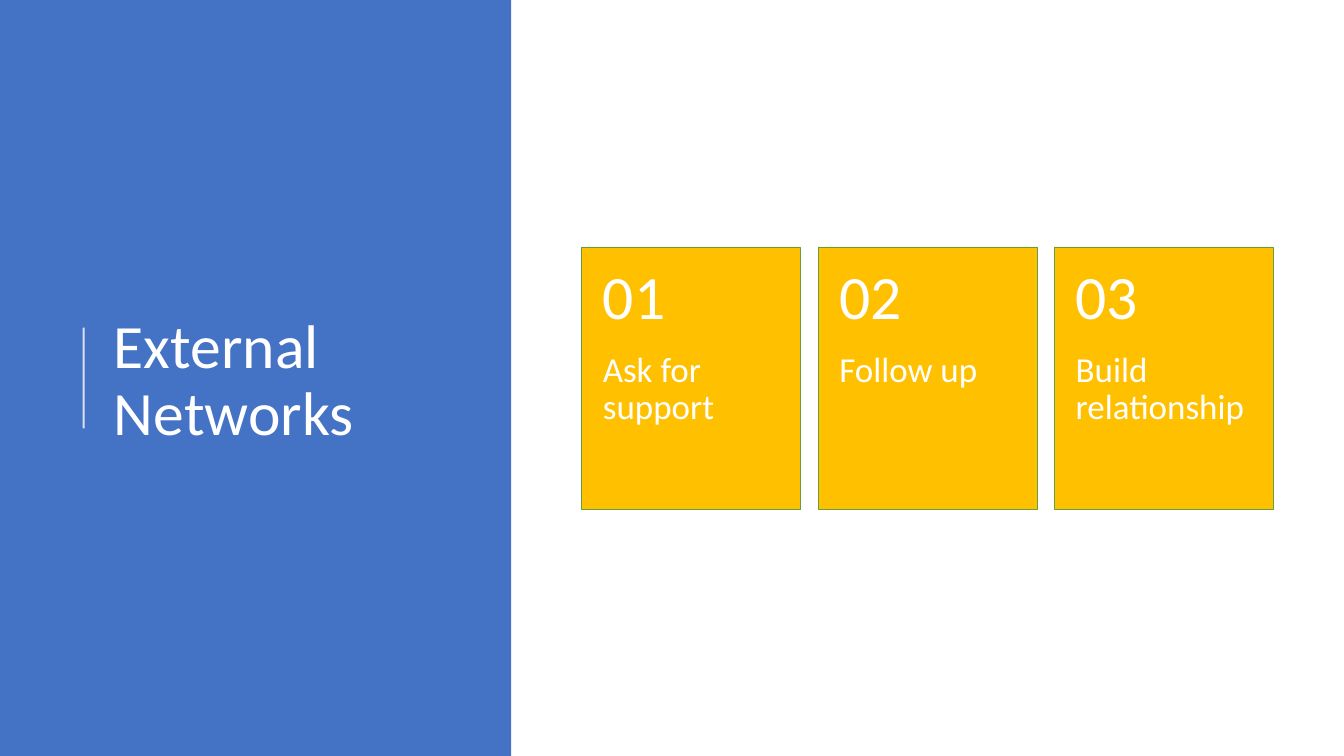
from pptx import Presentation
from pptx import util as u
from pptx.dml.color import RGBColor
from pptx.enum import shapes, text
from pptx.oxml.ns import qn
from lxml import etree

FONT = "Calibri"
WHITE, BLUE, GOLD, GREEN = "FFFFFF", "4472C4", "FFC000", "669D40"
STEPS = ["Ask for support", "Follow up", "Build relationship"]


def color(code):
    return RGBColor.from_string(code)


def place(shape, box):
    shape.left, shape.top, shape.width, shape.height = map(u.Inches, box)


def add_rect(tree, box, fill, edge=None):
    rect = tree.add_shape(shapes.MSO_SHAPE.RECTANGLE, *map(u.Inches, box))
    rect.shadow.inherit = False
    rect.fill.solid()
    rect.fill.fore_color.rgb = color(fill)
    if edge:
        rect.line.color.rgb = color(edge)
        rect.line.width = u.Pt(0.5)
    else:
        rect.line.fill.background()
    return rect


def write(frame, words, size, anchor):
    frame.word_wrap = True
    frame.auto_size = text.MSO_AUTO_SIZE.NONE
    frame.vertical_anchor = anchor
    frame.text = words
    para = frame.paragraphs[0]
    para.alignment = text.PP_ALIGN.LEFT
    para.line_spacing = 0.9
    para.font.name = FONT
    para.font.size = u.Pt(size)
    para.font.color.rgb = color(WHITE)


def add_label(tree, box, words, size, anchor, pads):
    frame = tree.add_textbox(*map(u.Inches, box)).text_frame
    frame.margin_left = frame.margin_right = u.Inches(0.21)
    frame.margin_top, frame.margin_bottom = map(u.Inches, pads)
    write(frame, words, size, anchor)


def add_panel(slide, box, words):
    x, y, w, h = box
    # Coloured panel, sent behind the title
    panel = add_rect(slide.shapes, box, BLUE)
    slide.shapes.element.insert(2, panel.element)

    # Accent line, centred on the panel's height
    left, mid = x + 0.83, y + h / 2
    rule = slide.shapes.add_connector(
        shapes.MSO_CONNECTOR.STRAIGHT,
        *map(u.Inches, (left, mid + 0.5, left, mid - 0.5)))
    rule.line.color.rgb = color(WHITE)
    rule.line.width = u.Pt(1.5)
    props = rule.element.spPr
    etree.SubElement(props, qn("a:effectLst"))
    tint = props.find(".//" + qn("a:srgbClr"))
    etree.SubElement(tint, qn("a:alpha")).set("val", "80000")

    # Title
    title = slide.shapes.title
    place(title, (x + 1.03, y + 0.78, w - 1.38, 6.02))
    write(title.text_frame, words, 44, text.MSO_ANCHOR.MIDDLE)


def add_card(slide, box, num, words):
    x, y, w, h = box
    head = 0.4 * h
    card = slide.shapes.add_group_shape().shapes
    add_rect(card, box, GOLD, GREEN)
    add_label(card, (x, y + head, w, h - head), words, 25,
              text.MSO_ANCHOR.TOP, (0, 0.36))
    add_label(card, (x, y, w, head), f"{num:02}", 44,
              text.MSO_ANCHOR.MIDDLE, (0.18, 0.18))


def add_cards(slide, box, steps):
    x, y, w, h = box
    wide = 2.17
    step = (w - wide) / (len(steps) - 1)
    for i, words in enumerate(steps):
        add_card(slide, (x + i * step, y, wide, h), i + 1, words)


def main():
    deck = Presentation()
    deck.slide_width, deck.slide_height = u.Inches(13.33), u.Inches(7.5)
    slide = deck.slides.add_slide(deck.slide_layouts[5])
    add_panel(slide, (0, 0, 5.07, 7.5), "External Networks")
    add_cards(slide, (5.77, 2.45, 6.86, 2.6), STEPS)
    deck.save("out.pptx")


if __name__ == "__main__":
    main()
